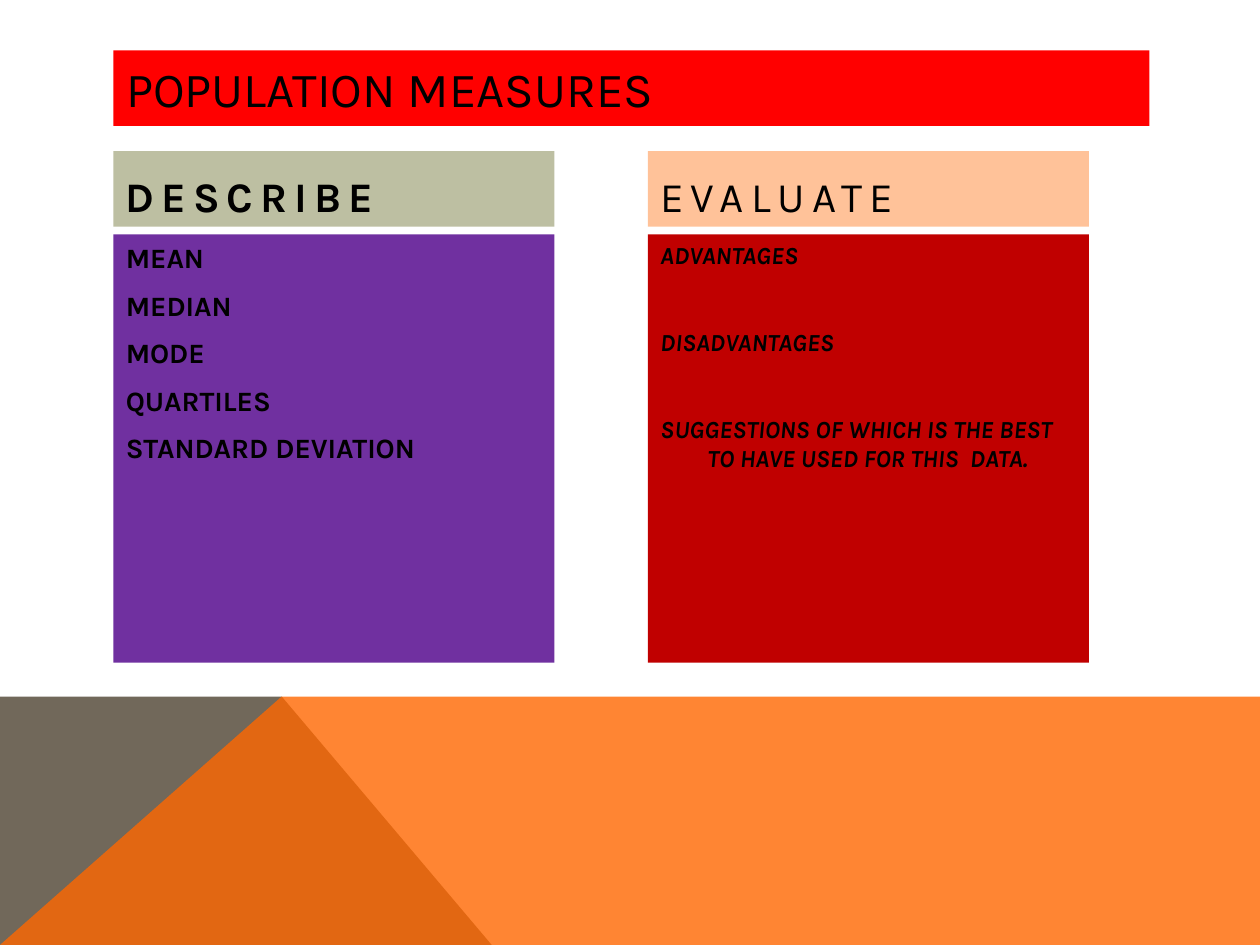
from pptx import Presentation
from pptx.dml.color import RGBColor
from pptx.enum.shapes import MSO_SHAPE
from pptx.enum.text import MSO_ANCHOR, MSO_AUTO_SIZE, PP_ALIGN
from pptx.oxml.ns import qn
from pptx.util import Pt
from lxml.etree import SubElement

TITLE = "POPULATION MEASURES"
COLUMNS = [
    {
        "head": "DESCRIBE", "head_fill": "sage", "head_bold": True,
        "items": ["MEAN", "MEDIAN", "MODE", "QUARTILES", "STANDARD DEVIATION"],
        "fill": "purple", "size": "list", "italic": False, "gap": 8,
    },
    {
        "head": "EVALUATE", "head_fill": "peach", "head_bold": False,
        "items": ["ADVANTAGES", "DISADVANTAGES",
                  "SUGGESTIONS OF WHICH IS THE BEST TO HAVE USED FOR THIS  DATA."],
        "fill": "crimson", "size": "notes", "italic": True, "gap": 32.7,
    },
]
THEME = {
    "font": "Karla",
    "sizes": {"title": 28, "head": 24, "list": 16, "notes": 14},
    "colors": {"text": "000000", "title": "FF0000", "sage": "BDBFA2",
               "peach": "FFC299", "purple": "7030A0", "crimson": "C00000",
               "taupe": "71685A", "orange": "FF6700"},
}

# Layout in points
WIDTH, HEIGHT = 720, 540
LEFT, COLUMN_STEP, COLUMN_WIDTH = 64.8, 305.4, 252
TITLE_BOX = (LEFT, 28.8, 592, 43.2)
HEAD_TOP, HEAD_HEIGHT = 86.4, 43.2
BODY_TOP, BODY_HEIGHT = 133.9, 244.8
HANGING = 27
BAND_TOP, PEAK_X, SLOPE_END = 397.6, 160.8, 281.4


def color(name):
    return RGBColor.from_string(THEME["colors"][name])


def paint(shape, fill):
    shape.fill.solid()
    shape.fill.fore_color.rgb = color(fill)
    shape.line.fill.background()


def add_polygon(s, points, fill, alpha=None):
    builder = s.shapes.build_freeform(*points[0], scale=Pt(1))
    builder.add_line_segments(points[1:], close=True)
    sp = builder.convert_to_shape()
    sp.shadow.inherit = False
    paint(sp, fill)
    if alpha:
        clr = sp.element.spPr.find(qn("a:solidFill")).find(qn("a:srgbClr"))
        SubElement(clr, qn("a:alpha")).set("val", str(alpha * 1000))


def add_panel(s, box, fill):
    sp = s.shapes.add_shape(MSO_SHAPE.RECTANGLE, *map(Pt, box))
    sp.shadow.inherit = False
    paint(sp, fill)
    return sp


def write(shape, lines, size, anchor, bold=False, italic=False,
          gap=0, hanging=0, tracking=0):
    tf = shape.text_frame
    tf.word_wrap = True
    tf.auto_size = MSO_AUTO_SIZE.NONE
    tf.vertical_anchor = anchor
    for i, line in enumerate(lines):
        p = tf.add_paragraph() if i else tf.paragraphs[0]
        p.alignment = PP_ALIGN.LEFT
        p.space_before = Pt(gap)
        if hanging:
            pPr = p._p.get_or_add_pPr()
            pPr.set("marL", str(Pt(hanging)))
            pPr.set("indent", str(-Pt(hanging)))
        r = p.add_run()
        r.text = line
        r.font.name = THEME["font"]
        r.font.size = Pt(THEME["sizes"][size])
        r.font.bold, r.font.italic = bold, italic
        r.font.color.rgb = color("text")
        if tracking:
            r._r.get_or_add_rPr().set("spc", str(tracking * 100))


def add_column(s, left, col):
    head = add_panel(s, (left, HEAD_TOP, COLUMN_WIDTH, HEAD_HEIGHT), col["head_fill"])
    write(head, [col["head"]], "head", MSO_ANCHOR.BOTTOM,
          bold=col["head_bold"], tracking=4)
    body = add_panel(s, (left, BODY_TOP, COLUMN_WIDTH, BODY_HEIGHT), col["fill"])
    write(body, col["items"], col["size"], MSO_ANCHOR.TOP, bold=True,
          italic=col["italic"], gap=col["gap"], hanging=HANGING)


def main():
    prs = Presentation()
    prs.slide_width, prs.slide_height = Pt(WIDTH), Pt(HEIGHT)
    s = prs.slides.add_slide(prs.slide_layouts[5])

    peak = (PEAK_X, BAND_TOP)
    add_polygon(s, [(0, HEIGHT), (0, BAND_TOP), peak, (SLOPE_END, HEIGHT)], "taupe")
    add_polygon(s, [(0, HEIGHT), peak, (WIDTH, BAND_TOP), (WIDTH, HEIGHT)],
                "orange", alpha=80)

    title = s.shapes.title
    title.left, title.top, title.width, title.height = map(Pt, TITLE_BOX)
    paint(title, "title")
    write(title, [TITLE], "title", MSO_ANCHOR.MIDDLE)

    for i, col in enumerate(COLUMNS):
        add_column(s, LEFT + i * COLUMN_STEP, col)
    prs.save("out.pptx")


if __name__ == "__main__":
    main()
